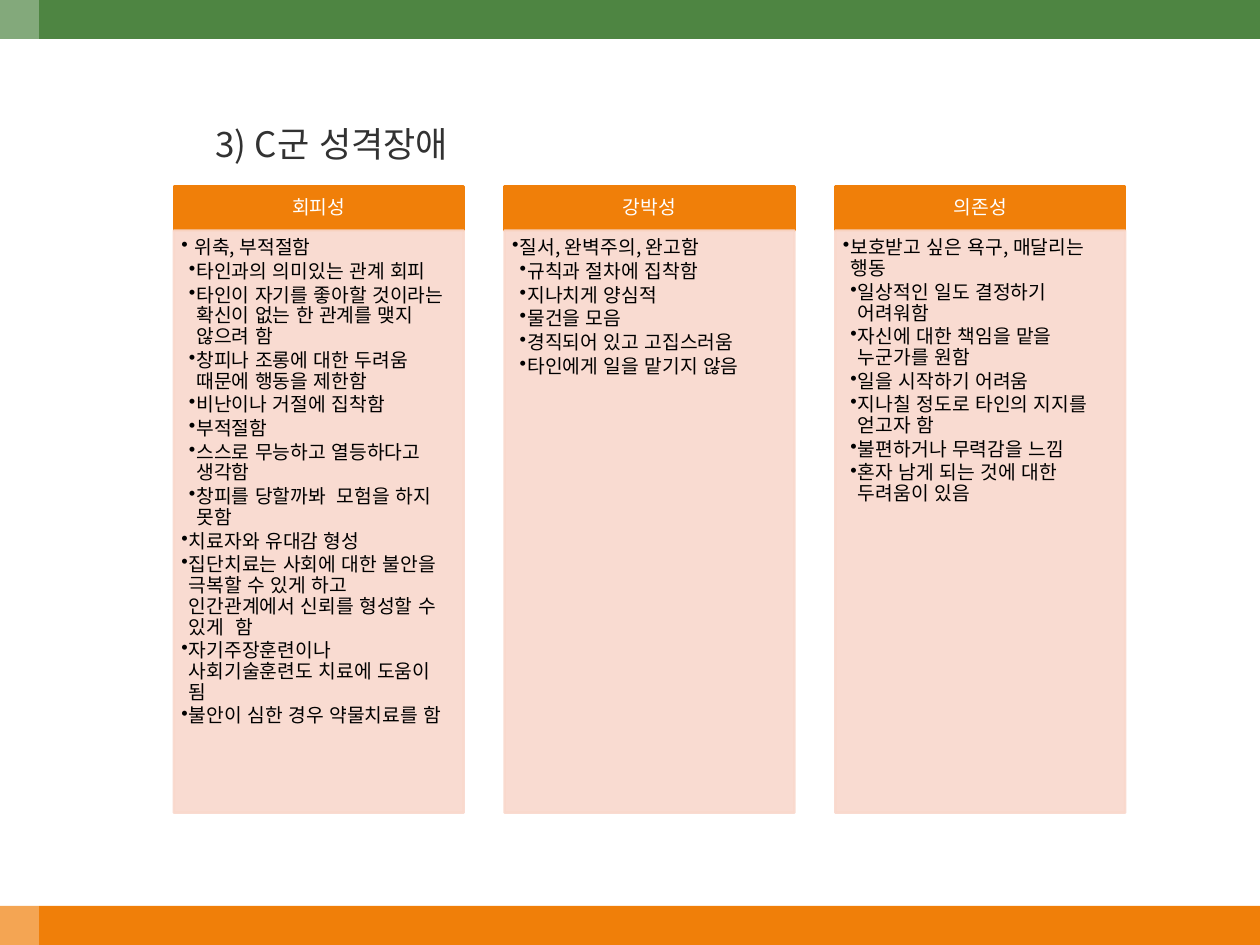
from lxml import etree
from pptx import Presentation
from pptx.dml.color import RGBColor
from pptx.enum.shapes import MSO_SHAPE
from pptx.enum.text import MSO_ANCHOR, PP_ALIGN
from pptx.oxml.ns import qn
from pptx.util import Inches, Pt

RECT = MSO_SHAPE.RECTANGLE
TOP, MIDDLE = MSO_ANCHOR.TOP, MSO_ANCHOR.MIDDLE
LEFT, CENTER = PP_ALIGN.LEFT, PP_ALIGN.CENTER
ORANGE = RGBColor(0xF0, 0x7F, 0x09)
GREEN = RGBColor(0x4E, 0x85, 0x42)
PINK = RGBColor(0xF9, 0xD8, 0xCC)
WHITE = RGBColor(0xFF, 0xFF, 0xFF)
BLACK = RGBColor(0, 0, 0)
GRAY = RGBColor(0x32, 0x32, 0x32)
FONT = "Noto Sans CJK KR"

TITLE = "3) C군 성격장애"
COLUMNS = [
    ("회피성", [
        (1, " 위축, 부적절함"),
        (2, "타인과의 의미있는 관계 회피"),
        (2, "타인이 자기를 좋아할 것이라는 확신이 없는 한 관계를 맺지 않으려 함"),
        (2, "창피나 조롱에 대한 두려움 때문에 행동을 제한함"),
        (2, "비난이나 거절에 집착함"),
        (2, "부적절함"),
        (2, "스스로 무능하고 열등하다고 생각함"),
        (2, "창피를 당할까봐  모험을 하지  못함"),
        (1, "치료자와 유대감 형성"),
        (1, "집단치료는 사회에 대한 불안을 극복할 수 있게 하고 인간관계에서 신뢰를 형성할 수 있게  함"),
        (1, "자기주장훈련이나 사회기술훈련도 치료에 도움이 됨"),
        (1, "불안이 심한 경우 약물치료를 함"),
    ]),
    ("강박성", [
        (1, "질서, 완벽주의, 완고함"),
        (2, "규칙과 절차에 집착함"),
        (2, "지나치게 양심적"),
        (2, "물건을 모음"),
        (2, "경직되어 있고 고집스러움"),
        (2, "타인에게 일을 맡기지 않음"),
    ]),
    ("의존성", [
        (1, "보호받고 싶은 욕구, 매달리는 행동"),
        (2, "일상적인 일도 결정하기 어려워함"),
        (2, "자신에 대한 책임을 맡을 누군가를 원함"),
        (2, "일을 시작하기 어려움"),
        (2, "지나칠 정도로 타인의 지지를 얻고자 함"),
        (2, "불편하거나 무력감을 느낌"),
        (2, "혼자 남게 되는 것에 대한 두려움이 있음"),
    ]),
]

WIDTH, HEIGHT, BAR = 10, 7.5, 0.31
GRID_LEFT, GRID_TOP, COL_W, GAP = 1.38, 1.48, 2.3, 0.325
HEAD_H, BODY_H, INDENT = 0.35, 4.62, 0.06
HEAD_FRAME = {"vertical_anchor": MIDDLE, "margin_left": Inches(0.09), "margin_top": Inches(0.05),
              "margin_right": Inches(0.09), "margin_bottom": Inches(0.05)}
BODY_FRAME = {"vertical_anchor": TOP, "margin_left": Inches(0.06), "margin_top": Inches(0.06),
              "margin_right": Inches(0.09), "margin_bottom": Inches(0.1)}
HEAD_PARA = {"alignment": CENTER, "line_spacing": 0.9}
BODY_PARA = {"alignment": LEFT, "line_spacing": 0.9, "space_after": Pt(1.65)}


def apply(obj, values):
    """Set each attribute of obj from a dict."""
    for name, value in values.items():
        setattr(obj, name, value)


def set_alpha(fill_parent, percent):
    """Make the solid fill below an element partly transparent."""
    color = fill_parent.find(qn("a:solidFill"))[0]
    etree.SubElement(color, qn("a:alpha"), val=str(percent * 1000))


def add_rect(s, box, color, alpha=100, line=False):
    """Add a flat rectangle, optionally outlined in its own colour."""
    sp = s.shapes.add_shape(RECT, *map(Inches, box))
    sp.shadow.inherit = False
    sp.fill.solid()
    sp.fill.fore_color.rgb = color
    parts = [sp._element.spPr]
    if line:
        sp.line.color.rgb = color
        sp.line.width = Pt(1.5)
        parts.append(sp.line._get_or_add_ln())
    else:
        sp.line.fill.background()
    if alpha < 100:
        for part in parts:
            set_alpha(part, alpha)
    return sp


def add_text(p, text, size, color):
    """Add a Korean run to a paragraph."""
    r = p.add_run()
    r.text = text
    apply(r.font, {"size": Pt(size), "name": FONT})
    r.font.color.rgb = color
    rPr = r.font._element
    rPr.set("lang", "ko-KR")
    rPr.find(qn("a:latin")).addnext(rPr.makeelement(qn("a:ea"), {"typeface": FONT}))


def add_bullet(p, level):
    """Give a paragraph a hanging bullet at the given level."""
    p.level = level
    pPr = p._p.get_or_add_pPr()
    pPr.set("marL", str(Inches(INDENT * level)))
    pPr.set("indent", str(-Inches(INDENT)))
    etree.SubElement(pPr, qn("a:buChar"), char="•")


def add_column(s, left, heading, items):
    """Add a heading box with its list box below."""
    head = add_rect(s, (left, GRID_TOP, COL_W, HEAD_H), ORANGE, line=True)
    apply(head.text_frame, HEAD_FRAME)
    p = head.text_frame.paragraphs[0]
    apply(p, HEAD_PARA)
    add_text(p, heading, 11, WHITE)

    body = add_rect(s, (left, GRID_TOP + HEAD_H, COL_W, BODY_H), PINK, 90, line=True)
    tf = body.text_frame
    apply(tf, {"word_wrap": True, **BODY_FRAME})
    for i, (level, text) in enumerate(items):
        p = tf.add_paragraph() if i else tf.paragraphs[0]
        apply(p, BODY_PARA)
        add_bullet(p, level)
        add_text(p, text, 11, BLACK)


def main():
    """Build the slide and save it."""
    prs = Presentation()
    prs.slide_width, prs.slide_height = Inches(WIDTH), Inches(HEIGHT)
    s = prs.slides.add_slide(prs.slide_layouts[5])

    add_rect(s, (0, HEIGHT - BAR, WIDTH, BAR), ORANGE)
    add_rect(s, (0, 0, WIDTH, BAR), GREEN)
    add_rect(s, (0, 0, BAR, HEIGHT), WHITE, 30)

    title = s.shapes.title
    apply(title, {"left": Inches(1.61), "top": Inches(0.92),
                  "width": Inches(6.78), "height": Inches(0.5)})
    title.text_frame.vertical_anchor = TOP
    p = title.text_frame.paragraphs[0]
    p.alignment = LEFT
    add_text(p, TITLE, 20, GRAY)

    for i, (heading, items) in enumerate(COLUMNS):
        add_column(s, GRID_LEFT + i * (COL_W + GAP), heading, items)
    prs.save("out.pptx")


if __name__ == "__main__":
    main()
